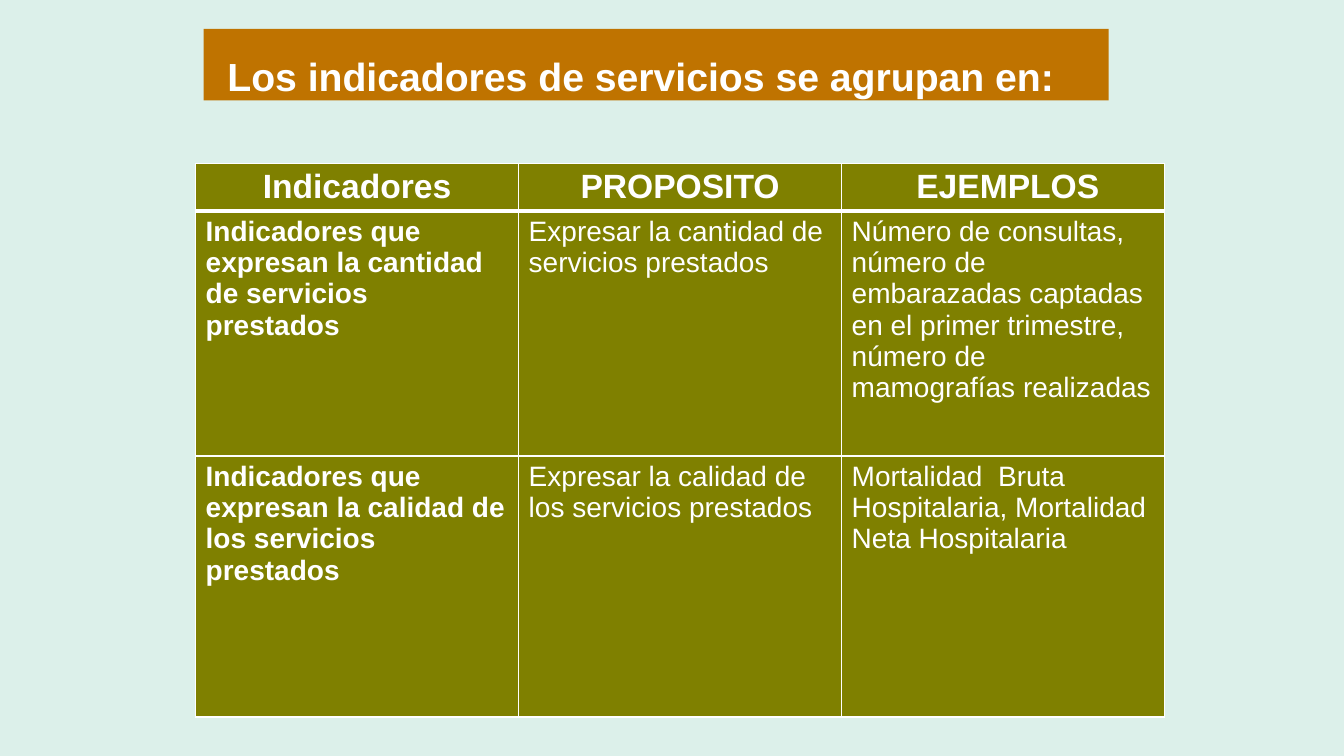
from lxml import etree
from pptx import Presentation
from pptx.dml.color import RGBColor
from pptx.enum.shapes import MSO_SHAPE
from pptx.enum.text import MSO_ANCHOR, PP_ALIGN
from pptx.oxml.ns import qn
from pptx.util import Cm, Pt

RECTANGLE = MSO_SHAPE.RECTANGLE
LEFT, CENTER = PP_ALIGN.LEFT, PP_ALIGN.CENTER
MIDDLE = MSO_ANCHOR.MIDDLE

MINT, ORANGE, OLIVE, WHITE = "DCF0EA", "BF7300", "7F8000", "FFFFFF"
COLUMN_WIDTH = 8.14
ROW_HEIGHTS = [1.19, 6.17, 6.58]
INDICATORS = [
    ["Indicadores", "PROPOSITO", " EJEMPLOS"],
    ["Indicadores que expresan la cantidad de servicios prestados",
     "Expresar la cantidad de servicios prestados",
     "Número de consultas, número de embarazadas captadas en el primer "
     "trimestre, número de mamografías realizadas"],
    ["Indicadores que expresan la calidad de los servicios prestados",
     "Expresar la calidad de los servicios prestados",
     "Mortalidad  Bruta  Hospitalaria, Mortalidad Neta Hospitalaria"],
]


def set_fill(fill, color):
    fill.solid()
    fill.fore_color.rgb = RGBColor.from_string(color)


def add_text(paragraph, text, size=20, bold=False, font="Arial",
             color=WHITE, align=LEFT):
    paragraph.alignment = align
    run = paragraph.add_run()
    run.text = text
    run.font.name = font
    run.font.size = Pt(size)
    run.font.bold = bold
    run.font.color.rgb = RGBColor.from_string(color)


def set_border(cell, side, points, color=WHITE):
    properties = cell._tc.get_or_add_tcPr()
    line = etree.SubElement(properties, qn(f"a:ln{side}"), w=str(Pt(points)))
    fill = etree.SubElement(line, qn("a:solidFill"))
    etree.SubElement(fill, qn("a:srgbClr"), val=color)


def add_title(slide):
    shape = slide.shapes.add_shape(RECTANGLE, Cm(5.13), Cm(0.73),
                                   Cm(22.81), Cm(1.8))
    shape.shadow.inherit = False
    set_fill(shape.fill, ORANGE)
    shape.line.fill.background()
    frame = shape.text_frame
    frame.word_wrap = True
    frame.vertical_anchor = MIDDLE
    frame.margin_top, frame.margin_bottom = Cm(0.2), Cm(0)
    paragraph = frame.paragraphs[0]
    # The large leading space sets the indent and the line height
    add_text(paragraph, " ", size=40, bold=True, font="Times New Roman")
    add_text(paragraph, "Los indicadores de servicios se agrupan en:",
             size=28, bold=True)


def add_indicator_table(slide):
    column_count = len(INDICATORS[0])
    table = slide.shapes.add_table(
        len(INDICATORS), column_count, Cm(4.93), Cm(4.12),
        Cm(COLUMN_WIDTH * column_count), Cm(sum(ROW_HEIGHTS))).table
    for column in table.columns:
        column.width = Cm(COLUMN_WIDTH)
    for row, height in zip(table.rows, ROW_HEIGHTS):
        row.height = Cm(height)

    for row_index, texts in enumerate(INDICATORS):
        header = row_index == 0
        for column_index, text in enumerate(texts):
            cell = table.cell(row_index, column_index)
            add_text(cell.text_frame.paragraphs[0], text,
                     size=24 if header else 20,
                     bold=header or column_index == 0,
                     align=CENTER if header else LEFT)
            # Borders come before the fill in the cell properties
            set_border(cell, "L", 1)
            set_border(cell, "R", 1)
            set_border(cell, "T", 3 if row_index == 1 else 1)
            set_border(cell, "B", 3 if header else 1)
            set_fill(cell.fill, OLIVE)


def main():
    presentation = Presentation()
    presentation.slide_width = Cm(33.87)
    presentation.slide_height = Cm(19.05)
    slide = presentation.slides.add_slide(presentation.slide_layouts[6])
    set_fill(slide.background.fill, MINT)
    add_title(slide)
    add_indicator_table(slide)
    presentation.save("out.pptx")


if __name__ == "__main__":
    main()
